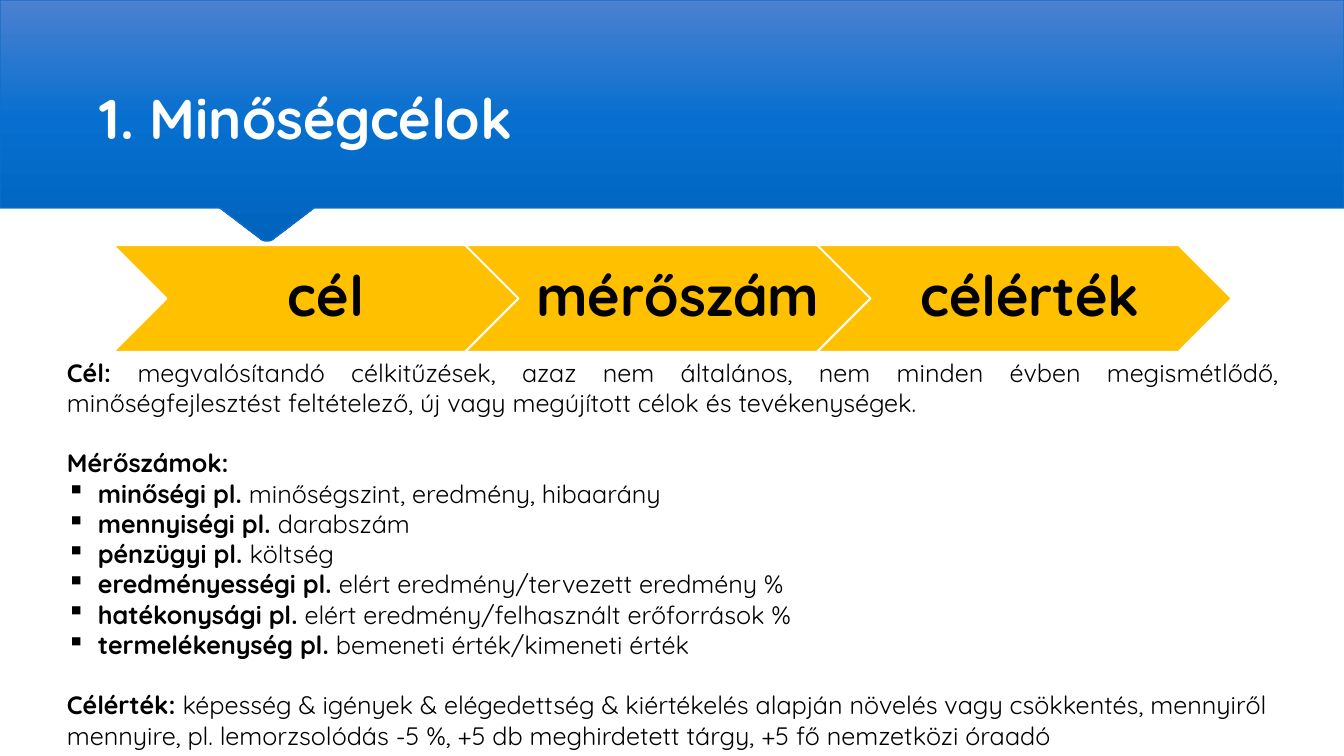
import copy
import pptx
import pptx.util
import pptx.dml.color
import pptx.enum.shapes
import pptx.enum.text
import pptx.oxml
import pptx.oxml.ns

RGBColor = pptx.dml.color.RGBColor
WHITE = RGBColor(0xFF, 0xFF, 0xFF)
BLACK = RGBColor(0x00, 0x00, 0x00)
TITLE_WHITE = RGBColor(0xFE, 0xFE, 0xFE)
GOLD = RGBColor(0xFF, 0xC0, 0x00)
BANNER_LINE = RGBColor(0x0F, 0x6F, 0xC6)
BANNER_STOPS = [
    (0, RGBColor(0x4C, 0x80, 0xD0)),
    (0.5, RGBColor(0x06, 0x6F, 0xCF)),
    (1, RGBColor(0x00, 0x63, 0xBD)),
]
SCALE = 12192000 / 1344
FONT = "Quicksand"
DRAWING = pptx.oxml.ns.nsdecls("a")


def px(length):
    return pptx.util.Emu(round(length * SCALE))


def add_run(paragraph, text, size, color, bold):
    run = paragraph.add_run()
    run.text = text
    run.font.size = pptx.util.Pt(size)
    run.font.bold = bold
    run.font.color.rgb = color
    run.font.name = FONT
    return run


presentation = pptx.Presentation()
presentation.slide_width = px(1344)
presentation.slide_height = px(756)
slide = presentation.slides.add_slide(presentation.slide_layouts[6])
slide.background.fill.solid()
slide.background.fill.fore_color.rgb = WHITE

builder = slide.shapes.build_freeform(1344, 0, scale=SCALE)
builder.add_line_segments([
    (0, 0), (0, 208), (220, 208), (262, 240), (265, 241),
    (269, 241), (272, 240), (314, 208), (1344, 208),
])
banner = builder.convert_to_shape()
banner.shadow.inherit = False
banner.fill.gradient()
banner.fill.gradient_angle = 270
first_stop = banner.fill._fill._gradFill.gsLst[0]
first_stop.addnext(copy.deepcopy(first_stop))
for stop, (position, color) in zip(banner.fill.gradient_stops, BANNER_STOPS):
    stop.position = position
    stop.color.rgb = color
banner.line.color.rgb = BANNER_LINE
banner.line.width = pptx.util.Pt(1)

title = slide.shapes.add_textbox(px(90), px(49), px(1165), px(107))
title.text_frame.word_wrap = True
title.text_frame.vertical_anchor = pptx.enum.text.MSO_ANCHOR.BOTTOM
title_run = add_run(title.text_frame.paragraphs[0], "1. Minőségcélok", 40, TITLE_WHITE, True)
title_shadow = pptx.oxml.parse_xml(
    f'<a:effectLst {DRAWING}><a:outerShdw blurRad="38100" dist="25400" dir="5400000">'
    '<a:srgbClr val="000000"><a:alpha val="50000"/></a:srgbClr></a:outerShdw></a:effectLst>'
)
title_run.font.fill._xPr.find(pptx.oxml.ns.qn("a:solidFill")).addnext(title_shadow)

for index, label in enumerate(["cél", "mérőszám", "célérték"]):
    chevron = slide.shapes.add_shape(
        pptx.enum.shapes.MSO_SHAPE.CHEVRON, px(113 + 352 * index), px(245), px(415), px(107)
    )
    chevron.shadow.inherit = False
    chevron.fill.solid()
    chevron.fill.fore_color.rgb = GOLD
    chevron.line.color.rgb = WHITE
    chevron.line.width = pptx.util.Pt(1.5)
    frame = chevron.text_frame
    frame.word_wrap = True
    frame.vertical_anchor = pptx.enum.text.MSO_ANCHOR.MIDDLE
    frame.margin_left = px(17)
    frame.margin_right = frame.margin_top = frame.margin_bottom = px(6)
    paragraph = frame.paragraphs[0]
    paragraph.alignment = pptx.enum.text.PP_ALIGN.CENTER
    paragraph.line_spacing = 0.9
    add_run(paragraph, label, 40, BLACK, True)

BODY = [
    ("intro", "Cél: ", "megvalósítandó célkitűzések, azaz nem általános, nem minden évben "
     "megismétlődő, minőségfejlesztést feltételező, új vagy megújított célok és tevékenységek."),
    ("section", "Mérőszámok:", ""),
    ("bullet", "minőségi pl. ", "minőségszint, eredmény, hibaarány"),
    ("bullet", "mennyiségi pl. ", "darabszám"),
    ("bullet", "pénzügyi pl. ", "költség"),
    ("bullet", "eredményességi pl. ", "elért eredmény/tervezett eredmény %"),
    ("bullet", "hatékonysági pl. ", "elért eredmény/felhasznált erőforrások %"),
    ("bullet", "termelékenység pl. ", "bemeneti érték/kimeneti érték"),
    ("section", "Célérték: ", "képesség & igények & elégedettség & kiértékelés alapján növelés "
     "vagy csökkentés, mennyiről mennyire, pl. lemorzsolódás -5 %, +5 db meghirdetett tárgy, "
     "+5 fő nemzetközi óraadó"),
]
body = slide.shapes.add_textbox(px(57), px(352), px(1231), px(407))
body.text_frame.word_wrap = True
body.text_frame.auto_size = pptx.enum.text.MSO_AUTO_SIZE.SHAPE_TO_FIT_TEXT
for index, (kind, lead, detail) in enumerate(BODY):
    paragraph = body.text_frame.add_paragraph() if index else body.text_frame.paragraphs[0]
    add_run(paragraph, lead, 18, BLACK, True)
    if detail:
        add_run(paragraph, detail, 18, BLACK, False)
    if kind == "intro":
        paragraph.alignment = pptx.enum.text.PP_ALIGN.JUSTIFY
    elif kind == "section":
        paragraph.space_before = pptx.util.Pt(21.6)
    else:
        properties = paragraph._p.get_or_add_pPr()
        properties.set("marL", str(px(31)))
        properties.set("indent", str(-px(31)))
        properties.append(pptx.oxml.parse_xml(f'<a:buChar {DRAWING} char="▪"/>'))

presentation.save("out.pptx")
